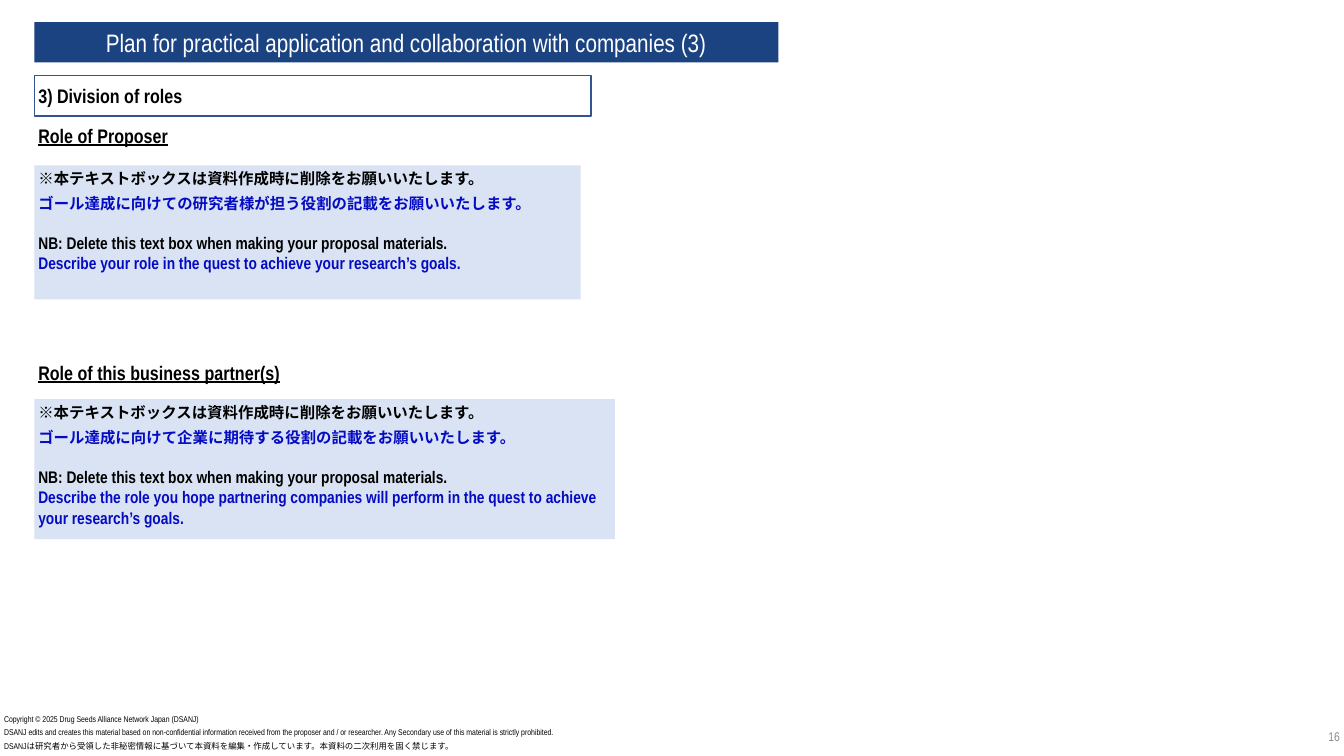
"""Build the slide on the division of roles between proposer and business partners."""
from dataclasses import dataclass
from typing import Optional

from lxml import etree
from pptx import Presentation
from pptx.dml.color import RGBColor
from pptx.enum import shapes, text
from pptx.oxml import ns
from pptx.util import Inches, Pt

NAVY = RGBColor(0x1B, 0x42, 0x81)
OUTLINE = RGBColor(0x32, 0x54, 0x91)
PALE_BLUE = RGBColor(0xDA, 0xE3, 0xF3)
INK_BLUE = RGBColor(0x04, 0x0B, 0xC2)
BLACK = RGBColor(0, 0, 0)
WHITE = RGBColor(0xFF, 0xFF, 0xFF)
GREY = RGBColor(0x89, 0x89, 0x89)
LATIN = "Arial Narrow"
JAPANESE = "Noto Sans CJK JP"
MARGIN = 0.34


@dataclass(frozen=True)
class Box:
    left: float
    top: float
    width: float
    height: float


@dataclass(frozen=True)
class Line:
    words: str
    size: float
    color: RGBColor = BLACK
    bold: bool = False
    underline: bool = False
    font: str = LATIN
    align: text.PP_ALIGN = text.PP_ALIGN.LEFT
    spacing: Optional[float] = None
    before: float = 0


@dataclass(frozen=True)
class Role:
    heading: str
    heading_box: Box
    note_box: Box
    request_ja: str
    request_en: str


ROLES = [
    Role("Role of Proposer", Box(MARGIN, 1.15, 2.47, 0.4), Box(MARGIN, 1.64, 5.42, 1.33),
         "ゴール達成に向けての研究者様が担う役割の記載をお願いいたします。",
         "Describe your role in the quest to achieve your research’s goals."),
    Role("Role of this business partner(s)", Box(MARGIN, 3.5, 4.9, 0.4),
         Box(MARGIN, 3.96, 5.76, 1.39),
         "ゴール達成に向けて企業に期待する役割の記載をお願いいたします。",
         "Describe the role you hope partnering companies will perform in the quest "
         "to achieve your research’s goals."),
]

FOOTER = [
    (Box(0, 7.04, 2.81, 0.2),
     Line("Copyright © 2025 Drug Seeds Alliance Network Japan (DSANJ)", 6)),
    (Box(0, 7.17, 7.72, 0.2),
     Line("DSANJ edits and creates this material based on non-confidential information "
          "received from the proposer and / or researcher. Any Secondary use of this "
          "material is strictly prohibited.", 6, spacing=7.2)),
    (Box(0, 7.31, 5.55, 0.2),
     Line("DSANJは研究者から受領した非秘密情報に基づいて本資料を編集・作成しています。"
          "本資料の二次利用を固く禁じます。", 6, spacing=7.2)),
]


def write(holder, lines: list[Line], anchor=text.MSO_ANCHOR.MIDDLE) -> None:
    """Fill a shape with formatted paragraphs."""
    frame = holder.text_frame
    frame.word_wrap = True
    frame.auto_size = text.MSO_AUTO_SIZE.NONE
    frame.vertical_anchor = anchor
    frame.margin_left = frame.margin_right = Inches(0.04)
    frame.margin_top = frame.margin_bottom = Inches(0.04)
    for index, line in enumerate(lines):
        paragraph = frame.add_paragraph() if index else frame.paragraphs[0]
        paragraph.alignment = line.align
        if line.spacing:
            paragraph.line_spacing = Pt(line.spacing)
        if line.before:
            paragraph.space_before = Pt(line.before)
        run = paragraph.add_run()
        run.text = line.words
        run.font.size = Pt(line.size)
        run.font.bold = line.bold
        run.font.underline = line.underline
        run.font.color.rgb = line.color
        run.font.name = line.font
        east_asian = etree.SubElement(run._r.get_or_add_rPr(), ns.qn("a:ea"))
        east_asian.set("typeface", JAPANESE)


def lengths(box: Box) -> tuple:
    """Turn a box into slide lengths."""
    return tuple(Inches(v) for v in (box.left, box.top, box.width, box.height))


def add_title(slide, box: Box, line: Line) -> None:
    """Place the title as a filled banner."""
    banner = slide.shapes.title
    banner.left, banner.top, banner.width, banner.height = lengths(box)
    banner.fill.solid()
    banner.fill.fore_color.rgb = NAVY
    write(banner, [line])


def add_label(slide, box: Box, line: Line, anchor=text.MSO_ANCHOR.MIDDLE) -> None:
    """Add unframed text."""
    write(slide.shapes.add_textbox(*lengths(box)), [line], anchor)


def add_panel(slide, box: Box, lines: list[Line], anchor,
              fill: Optional[RGBColor] = None, outline: Optional[RGBColor] = None) -> None:
    """Add a rectangle holding text."""
    panel = slide.shapes.add_shape(shapes.MSO_SHAPE.RECTANGLE, *lengths(box))
    panel.shadow.inherit = False
    if fill is None:
        panel.fill.background()
    else:
        panel.fill.solid()
        panel.fill.fore_color.rgb = fill
    if outline is None:
        panel.line.fill.background()
    else:
        panel.line.color.rgb = outline
        panel.line.width = Pt(1)
    write(panel, lines, anchor)


def add_role(slide, role: Role) -> None:
    """Add a role heading and its instruction panel."""
    add_label(slide, role.heading_box, Line(role.heading, 14, bold=True, underline=True))
    instructions = [
        Line("※本テキストボックスは資料作成時に削除をお願いいたします。", 11,
             bold=True, font=JAPANESE),
        Line(role.request_ja, 11, INK_BLUE, bold=True, font=JAPANESE, spacing=18),
        Line("NB: Delete this text box when making your proposal materials.", 12,
             bold=True, before=14.3),
        Line(role.request_en, 12, INK_BLUE, bold=True),
    ]
    add_panel(slide, role.note_box, instructions, text.MSO_ANCHOR.TOP, fill=PALE_BLUE)


def main() -> None:
    """Compose and save the slide."""
    deck = Presentation()
    deck.slide_width, deck.slide_height = Inches(13.33), Inches(7.5)
    slide = deck.slides.add_slide(deck.slide_layouts.get_by_name("Title Only"))
    add_title(slide, Box(MARGIN, 0.22, 7.38, 0.4),
              Line("Plan for practical application and collaboration with companies (3)",
                   18, WHITE, align=text.PP_ALIGN.CENTER))
    add_panel(slide, Box(MARGIN, 0.75, 5.52, 0.4),
              [Line("3) Division of roles", 14, bold=True)],
              text.MSO_ANCHOR.MIDDLE, outline=OUTLINE)
    for role in ROLES:
        add_role(slide, role)
    for box, line in FOOTER:
        add_label(slide, box, line, text.MSO_ANCHOR.TOP)
    add_label(slide, Box(11, 7.12, 2.33, 0.37),
              Line("16", 9, GREY, align=text.PP_ALIGN.RIGHT))
    deck.save("out.pptx")


if __name__ == "__main__":
    main()
